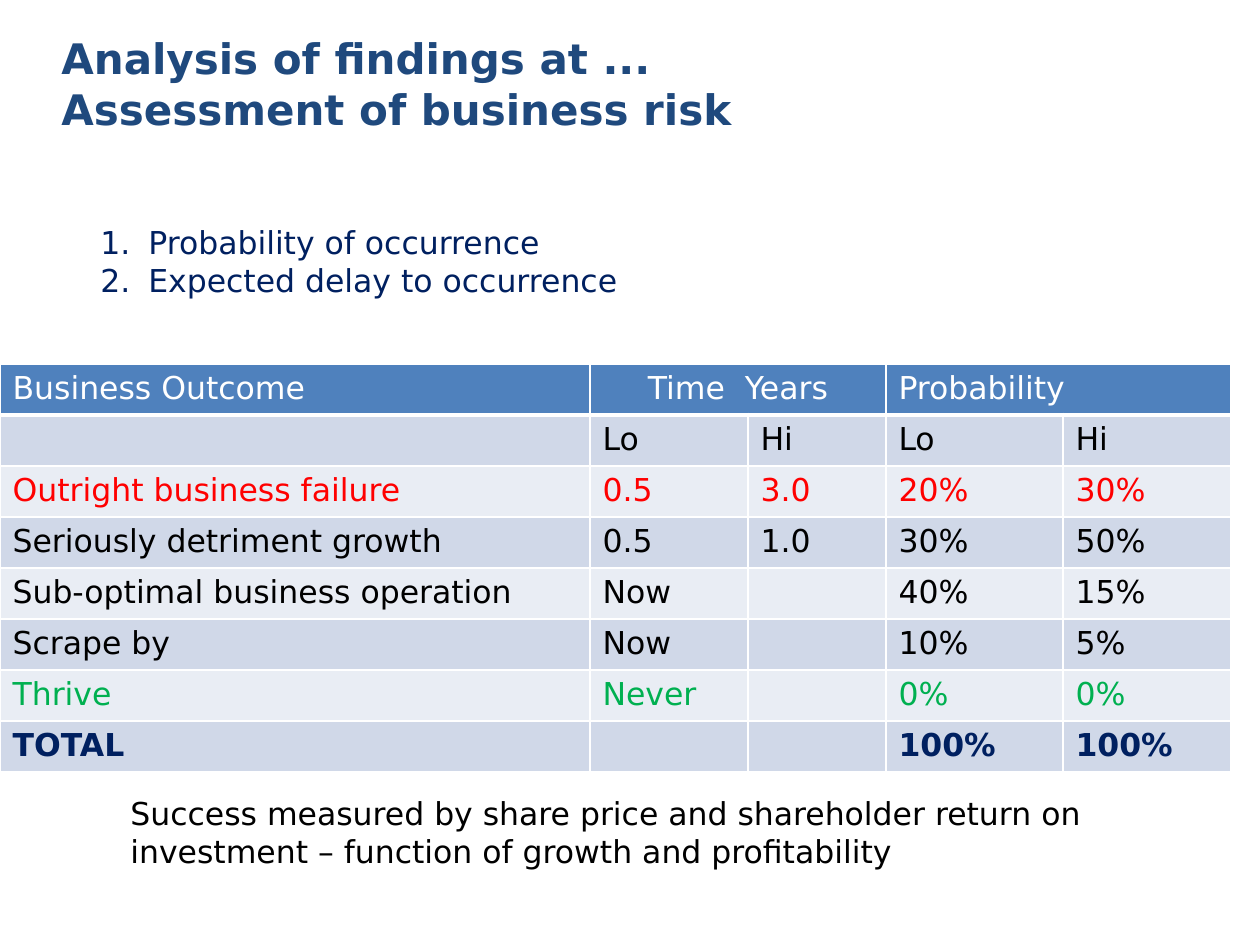
from lxml import etree
from pptx import Presentation
from pptx.dml.color import RGBColor
from pptx.enum.text import MSO_ANCHOR, PP_ALIGN
from pptx.oxml.ns import qn
from pptx.util import Pt

TOP, MIDDLE = MSO_ANCHOR.TOP, MSO_ANCHOR.MIDDLE
LEFT, CENTER = PP_ALIGN.LEFT, PP_ALIGN.CENTER
EMU_PER_PX = 914400 / 126
FONT = "DejaVu Sans"
COLORS = {
    "title": "1F497D", "navy": "002060", "black": "000000", "white": "FFFFFF",
    "red": "FF0000", "green": "00B050",
    "header": "4F81BD", "band_dark": "D0D8E8", "band_light": "E9EDF4",
}


def px(length):
    return round(length * EMU_PER_PX)


def write(frame, text, size=18, color="black", bold=False, align=LEFT,
          anchor=TOP, number_indent=0):
    """Fill a text frame, one paragraph a line, numbered if number_indent is set."""
    frame.word_wrap = True
    frame.vertical_anchor = anchor
    for index, line in enumerate(text.split("\n")):
        paragraph = frame.add_paragraph() if index else frame.paragraphs[0]
        paragraph.alignment = align
        if number_indent:
            properties = paragraph._p.get_or_add_pPr()
            properties.set("marL", str(px(number_indent)))
            properties.set("indent", str(-px(number_indent)))
            etree.SubElement(properties, qn("a:buAutoNum"), type="arabicPeriod")
        run = paragraph.add_run()
        run.text = line
        run.font.name = FONT
        run.font.size = Pt(size)
        run.font.bold = bold
        run.font.color.rgb = RGBColor.from_string(COLORS[color])


presentation = Presentation()
presentation.slide_width = px(1260)
presentation.slide_height = px(945)
slide = presentation.slides.add_slide(presentation.slide_layouts[6])

# Title, numbered criteria and closing remark
text_boxes = [
    ((49, 29, 886, 108), "Analysis of findings at ...\nAssessment of business risk",
     dict(size=24, color="title", bold=True, anchor=MIDDLE)),
    ((88, 217, 1123, 89), "Probability of occurrence\nExpected delay to occurrence",
     dict(color="navy", number_indent=48)),
    ((118, 788, 1063, 89),
     "Success measured by share price and shareholder return on investment "
     "– function of growth and profitability", {}),
]
for box, text, text_format in text_boxes:
    shape = slide.shapes.add_textbox(*map(px, box))
    write(shape.text_frame, text, **text_format)

# Risk table: text colour of the row, then its cells
rows = [
    ("white", ["Business Outcome", "Time  Years", "", "Probability", ""]),
    ("black", ["", "Lo", "Hi", "Lo", "Hi"]),
    ("red", ["Outright business failure", "0.5", "3.0", "20%", "30%"]),
    ("black", ["Seriously detriment growth", "0.5", "1.0", "30%", "50%"]),
    ("black", ["Sub-optimal business operation", "Now", "", "40%", "15%"]),
    ("black", ["Scrape by", "Now", "", "10%", "5%"]),
    ("green", ["Thrive", "Never", "", "0%", "0%"]),
    ("navy", ["TOTAL", "", "", "100%", "100%"]),
]
column_widths = [590, 158, 138, 177, 168]
table = slide.shapes.add_table(
    len(rows), len(column_widths), 0, px(364), px(sum(column_widths)), px(51 * len(rows))
).table
for column, width in zip(table.columns, column_widths):
    column.width = px(width)
for first_column in (1, 3):
    table.cell(0, first_column).merge(table.cell(0, first_column + 1))

for row_index, (text_color, texts) in enumerate(rows):
    is_header = row_index == 0
    is_total = row_index == len(rows) - 1
    band = "header" if is_header else "band_dark" if row_index % 2 else "band_light"
    for column_index, text in enumerate(texts):
        cell = table.cell(row_index, column_index)
        cell_properties = cell._tc.get_or_add_tcPr()
        for side in ("lnL", "lnR", "lnT", "lnB"):
            width = Pt(3 if is_header and side == "lnB" else 1)
            line = etree.SubElement(cell_properties, qn(f"a:{side}"), w=str(width))
            line_fill = etree.SubElement(line, qn("a:solidFill"))
            etree.SubElement(line_fill, qn("a:srgbClr"), val=COLORS["white"])
        cell.fill.solid()
        cell.fill.fore_color.rgb = RGBColor.from_string(COLORS[band])
        if text:
            write(cell.text_frame, text, color=text_color, bold=is_total,
                  align=CENTER if is_header and column_index == 1 else LEFT)

presentation.save("out.pptx")
